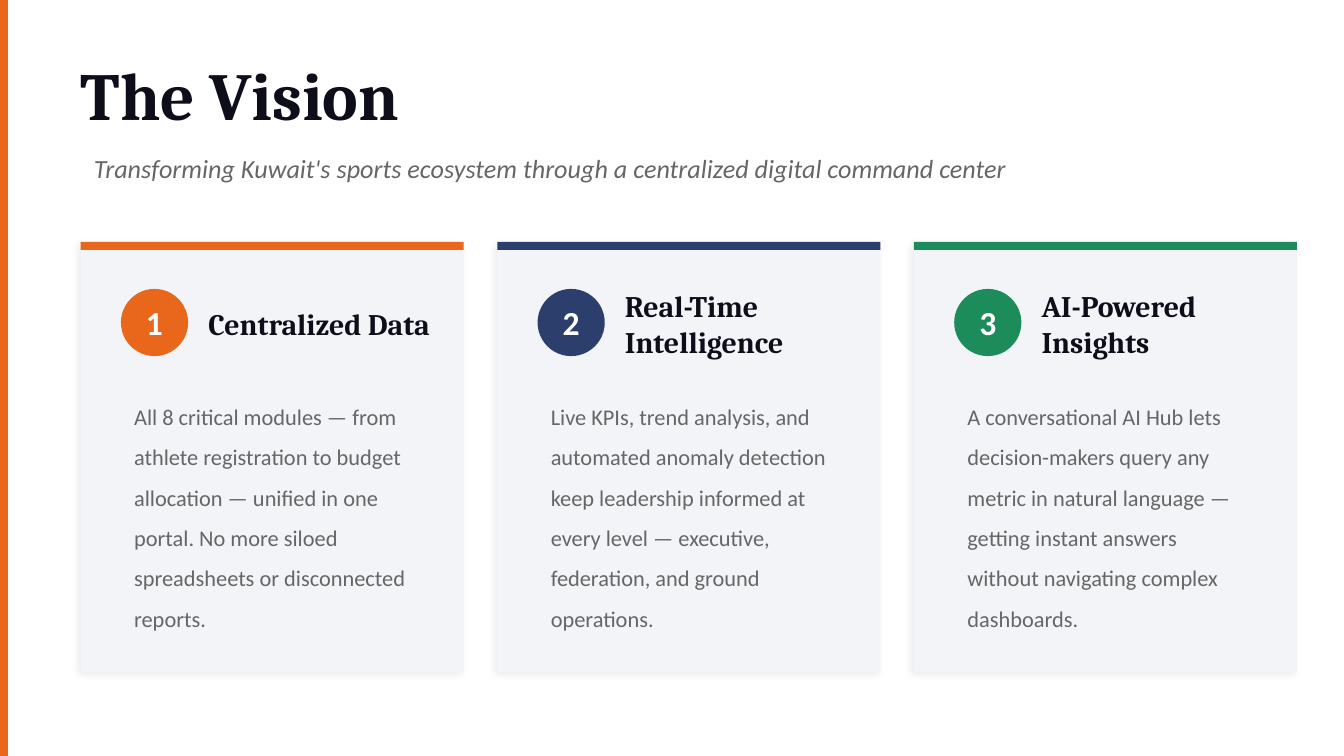
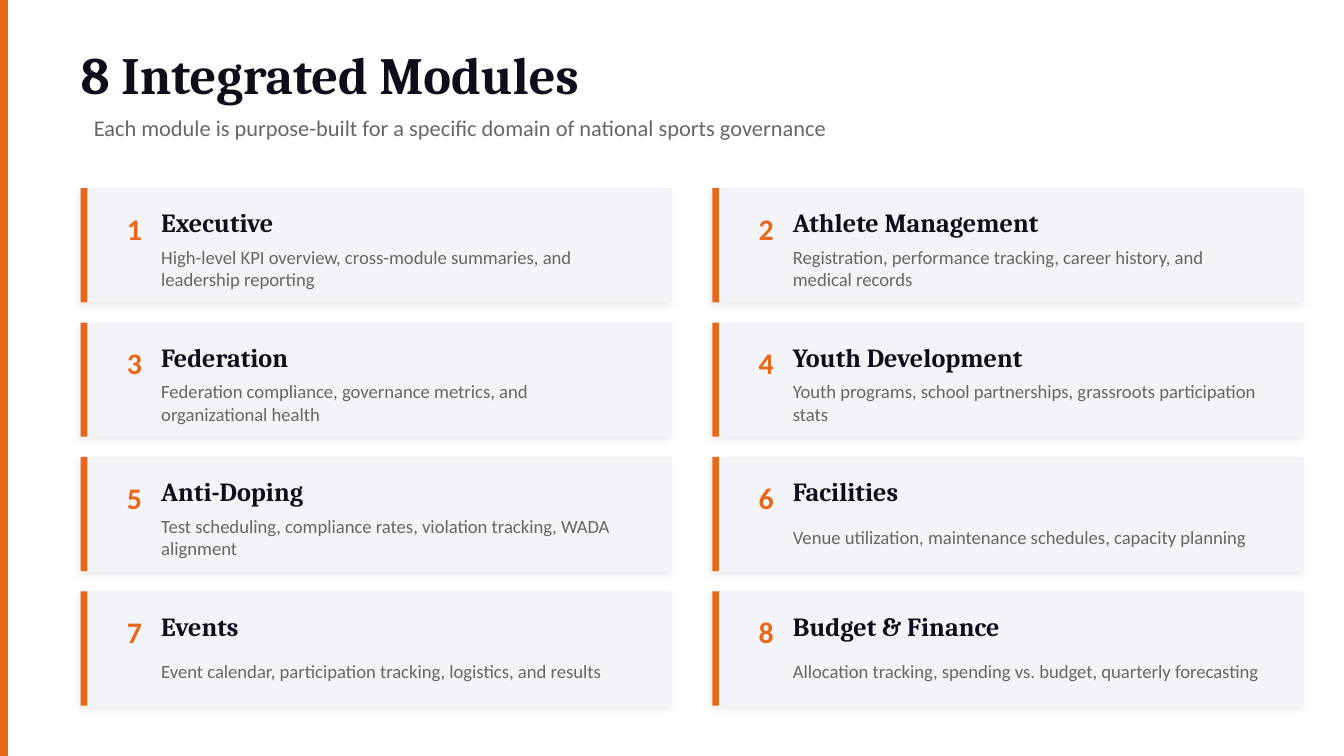
import pptx
import pptx.dml.color
import pptx.enum.shapes
import pptx.enum.text
import pptx.oxml
import pptx.util

Pt = pptx.util.Pt
SHAPE = pptx.enum.shapes.MSO_SHAPE
ALIGN = pptx.enum.text.PP_ALIGN

WIDTH, HEIGHT = 720, 405
MARGIN = 43.2
ORANGE, NAVY, GREEN = "E8671A", "2C3E6B", "1B8C5A"
INK, GRAY, PANEL, WHITE = "0D0E1A", "666666", "F3F4F8", "FFFFFF"
HEADING, BODY = "Cambria", "Calibri"

SHADOW = (
    '<a:outerShdw xmlns:a="http://schemas.openxmlformats.org/drawingml/2006/main" '
    'blurRad="50800" dist="25400" dir="8100000" algn="bl" rotWithShape="0">'
    '<a:srgbClr val="000000"><a:alpha val="8000"/></a:srgbClr></a:outerShdw>'
)

PILLARS = [
    (ORANGE, "Centralized Data",
     "All 8 critical modules — from athlete registration to budget allocation — "
     "unified in one portal. No more siloed spreadsheets or disconnected reports."),
    (NAVY, "Real-Time Intelligence",
     "Live KPIs, trend analysis, and automated anomaly detection keep leadership "
     "informed at every level — executive, federation, and ground operations."),
    (GREEN, "AI-Powered Insights",
     "A conversational AI Hub lets decision-makers query any metric in natural "
     "language — getting instant answers without navigating complex dashboards."),
]

MODULES = [
    ("Executive", "High-level KPI overview, cross-module summaries, and leadership reporting"),
    ("Athlete Management", "Registration, performance tracking, career history, and medical records"),
    ("Federation", "Federation compliance, governance metrics, and organizational health"),
    ("Youth Development", "Youth programs, school partnerships, grassroots participation stats"),
    ("Anti-Doping", "Test scheduling, compliance rates, violation tracking, WADA alignment"),
    ("Facilities", "Venue utilization, maintenance schedules, capacity planning"),
    ("Events", "Event calendar, participation tracking, logistics, and results"),
    ("Budget & Finance", "Allocation tracking, spending vs. budget, quarterly forecasting"),
]


def rgb(value):
    return pptx.dml.color.RGBColor.from_string(value)


def add_block(s, x, y, w, h, fill, kind=SHAPE.RECTANGLE, shadow=False):
    sp = s.shapes.add_shape(kind, Pt(x), Pt(y), Pt(w), Pt(h))
    sp.shadow.inherit = False
    sp.fill.solid()
    sp.fill.fore_color.rgb = rgb(fill)
    sp.line.fill.background()
    if shadow:
        effects = sp._element.spPr.find(pptx.oxml.ns.qn("a:effectLst"))
        effects.append(pptx.oxml.parse_xml(SHADOW))
    return sp


def add_text(s, text, x, y, w, h, size=12, font=BODY, color=GRAY, bold=False,
             italic=False, align=ALIGN.LEFT, spacing=None, inset=True):
    tf = s.shapes.add_textbox(Pt(x), Pt(y), Pt(w), Pt(h)).text_frame
    tf.word_wrap = True
    tf.vertical_anchor = pptx.enum.text.MSO_ANCHOR.MIDDLE
    if not inset:
        tf.margin_left = tf.margin_top = tf.margin_right = tf.margin_bottom = 0
    p = tf.paragraphs[0]
    p.alignment = align
    if spacing:
        p.line_spacing = spacing
    r = p.add_run()
    r.text = text
    r.font.size = Pt(size)
    r.font.name = font
    r.font.bold = bold
    r.font.italic = italic
    r.font.color.rgb = rgb(color)


def add_heading(s, text, x, y, w, h, size):
    add_text(s, text, x, y, w, h, size=size, font=HEADING, color=INK, bold=True, inset=False)


def add_page(prs, title, subtitle, y, title_h, subtitle_h, title_size, **subtitle_format):
    s = prs.slides.add_slide(prs.slide_layouts[6])
    s.background.fill.solid()
    s.background.fill.fore_color.rgb = rgb(WHITE)
    add_block(s, 0, 0, 4.32, HEIGHT, ORANGE)
    add_heading(s, title, MARGIN, y, 648, title_h, title_size)
    add_text(s, subtitle, MARGIN, y + title_h, 576, subtitle_h, **subtitle_format)
    return s


def add_pillar(s, x, y, w, h, number, color, title, text):
    add_block(s, x, y, w, h, PANEL, shadow=True)
    add_block(s, x, y, w, 4.32, color)
    badge = (x + 21.6, y + 25.2, 36, 36)
    add_block(s, *badge, color, kind=SHAPE.OVAL)
    add_text(s, str(number), *badge, size=18, color=WHITE, bold=True, align=ALIGN.CENTER)
    add_heading(s, title, x + 68.4, y + 27.36, w - 82.8, 32.4, 16)
    add_text(s, text, x + 21.6, y + 79.2, w - 39.6, 129.6, spacing=1.5)


def add_module(s, x, y, w, h, number, title, text):
    add_block(s, x, y, w, h, PANEL, shadow=True)
    add_block(s, x, y, 3.6, h, ORANGE)
    add_text(s, str(number), x + 14.4, y + 7.2, 28.8, 28.8,
             size=16, color=ORANGE, bold=True, align=ALIGN.CENTER)
    add_heading(s, title, x + 43.2, y + 5.76, w - 64.8, 25.2, 14)
    add_text(s, text, x + 43.2, y + 30.24, w - 64.8, 25.2, size=10, inset=False)


def vision_slide(prs):
    s = add_page(prs, "The Vision",
                 "Transforming Kuwait's sports ecosystem through a centralized digital command center",
                 28.8, 43.2, 36, 36, size=14, italic=True)
    w, gap = 205.2, 18
    for i, pillar in enumerate(PILLARS):
        add_pillar(s, MARGIN + i * (w + gap), 129.6, w, 230.4, i + 1, *pillar)


def modules_slide(prs):
    s = add_page(prs, "8 Integrated Modules",
                 "Each module is purpose-built for a specific domain of national sports governance",
                 21.6, 36, 21.6, 28)
    w, h, gap_x, gap_y = 316.8, 61.2, 21.6, 10.8
    for i, module in enumerate(MODULES):
        row, col = divmod(i, 2)
        add_module(s, MARGIN + col * (w + gap_x), 100.8 + row * (h + gap_y), w, h, i + 1, *module)


def main():
    prs = pptx.Presentation()
    prs.slide_width, prs.slide_height = Pt(WIDTH), Pt(HEIGHT)
    vision_slide(prs)
    modules_slide(prs)
    prs.save("out.pptx")


if __name__ == "__main__":
    main()
